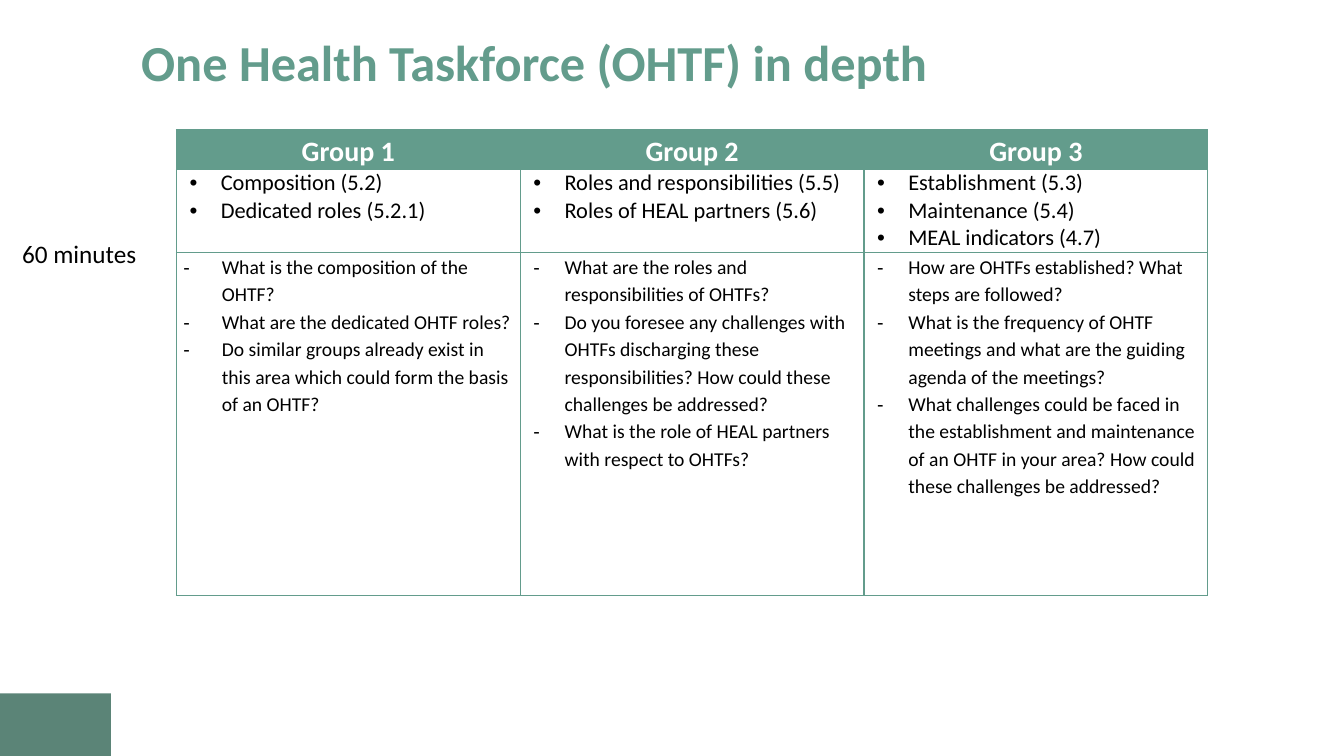
from dataclasses import dataclass

from lxml import etree
from pptx import Presentation
from pptx import util as u
from pptx.dml.color import RGBColor
from pptx.enum import shapes, text
from pptx.oxml import ns


@dataclass(frozen=True)
class Theme:
    font: str = "Calibri"
    green: RGBColor = RGBColor(0x63, 0x9C, 0x8C)
    corner: RGBColor = RGBColor(0x5B, 0x84, 0x77)
    black: RGBColor = RGBColor(0, 0, 0)
    white: RGBColor = RGBColor(255, 255, 255)
    title_size: int = 36
    header_size: int = 20
    duration_size: int = 18
    topic_size: int = 16
    question_size: int = 14
    border_width: int = 1


THEME = Theme()

GROUPS = [
    (
        "Group 1",
        ["Composition (5.2)", "Dedicated roles (5.2.1)"],
        [
            "What is the composition of the OHTF?",
            "What are the dedicated OHTF roles?",
            "Do similar groups already exist in this area which could form the basis of an OHTF?",
        ],
        (0.38, -0.38),
    ),
    (
        "Group 2",
        ["Roles and responsibilities (5.5)", "Roles of HEAL partners (5.6)"],
        [
            "What are the roles and responsibilities of OHTFs?",
            "Do you foresee any challenges with OHTFs discharging these responsibilities? "
            "How could these challenges be addressed?",
            "What is the role of HEAL partners with respect to OHTFs?",
        ],
        (0.37, -0.31),
    ),
    (
        "Group 3",
        ["Establishment (5.3)", "Maintenance (5.4)", "MEAL indicators (4.7)"],
        [
            "How are OHTFs established? What steps are followed?",
            "What is the frequency of OHTF meetings and what are the guiding agenda of the meetings?",
            "What challenges could be faced in the establishment and maintenance of an OHTF "
            "in your area? How could these challenges be addressed?",
        ],
        (0.37, -0.31),
    ),
]
TOPIC_INDENT = (0.37, -0.31)
ROW_HEIGHTS = (0.39, 0.82, 3.41)
COLUMN_WIDTH = 3.41


def add_run(paragraph, content, size, color, bold=False):
    run = paragraph.add_run()
    run.text = content
    run.font.name = THEME.font
    run.font.size = u.Pt(size)
    run.font.bold = bold
    run.font.color.rgb = color


def set_bullet(paragraph, character, indent):
    properties = paragraph._p.get_or_add_pPr()
    left, first = indent
    properties.set("marL", str(u.Inches(left)))
    properties.set("indent", str(u.Inches(first)))
    etree.SubElement(properties, ns.qn("a:buFont"), typeface="Arial")
    etree.SubElement(properties, ns.qn("a:buChar"), char=character)


def set_borders(cell):
    properties = cell._tc.get_or_add_tcPr()
    for side in ("lnL", "lnR", "lnT", "lnB"):
        line = etree.SubElement(properties, ns.qn(f"a:{side}"), w=str(u.Pt(THEME.border_width)))
        fill = etree.SubElement(line, ns.qn("a:solidFill"))
        etree.SubElement(fill, ns.qn("a:srgbClr"), val=str(THEME.green))


def format_cell(cell, fill=None):
    cell.margin_left = cell.margin_right = u.Inches(0.07)
    cell.margin_top = cell.margin_bottom = 0
    set_borders(cell)
    if fill is None:
        cell.fill.background()
    else:
        cell.fill.solid()
        cell.fill.fore_color.rgb = fill


def fill_header(cell, content):
    format_cell(cell, THEME.green)
    paragraph = cell.text_frame.paragraphs[0]
    paragraph.alignment = text.PP_ALIGN.CENTER
    paragraph.line_spacing = 1.15
    paragraph.space_after = u.Pt(12)
    add_run(paragraph, content, THEME.header_size, THEME.white, bold=True)


def fill_list(cell, items, character, indent, size, spacing):
    format_cell(cell)
    frame = cell.text_frame
    for index, item in enumerate(items):
        paragraph = frame.add_paragraph() if index else frame.paragraphs[0]
        set_bullet(paragraph, character, indent)
        paragraph.line_spacing = spacing
        add_run(paragraph, item, size, THEME.black)


def add_group_table(slide):
    table = slide.shapes.add_table(
        len(ROW_HEIGHTS), len(GROUPS), u.Inches(1.75), u.Inches(1.29),
        u.Inches(COLUMN_WIDTH * len(GROUPS)), u.Inches(sum(ROW_HEIGHTS)),
    ).table
    table.horz_banding = False
    for row, height in zip(table.rows, ROW_HEIGHTS):
        row.height = u.Inches(height)
    for column, (name, topics, questions, indent) in enumerate(GROUPS):
        table.columns[column].width = u.Inches(COLUMN_WIDTH)
        fill_header(table.cell(0, column), name)
        fill_list(table.cell(1, column), topics, "•", TOPIC_INDENT, THEME.topic_size, 1.0)
        fill_list(table.cell(2, column), questions, "-", indent, THEME.question_size, 1.15)


def set_title(slide, content):
    title = slide.shapes.title
    title.left, title.top = u.Inches(1.3), u.Inches(0.29)
    title.width, title.height = u.Inches(11.11), u.Inches(0.71)
    frame = title.text_frame
    frame.word_wrap = True
    frame.auto_size = text.MSO_AUTO_SIZE.NONE
    frame.vertical_anchor = text.MSO_ANCHOR.MIDDLE
    paragraph = frame.paragraphs[0]
    paragraph.alignment = text.PP_ALIGN.LEFT
    paragraph.line_spacing = 0.9
    add_run(paragraph, content, THEME.title_size, THEME.green, bold=True)


def add_corner_block(slide):
    block = slide.shapes.add_shape(
        shapes.MSO_SHAPE.RECTANGLE, 0, u.Inches(6.88), u.Inches(1.1), u.Inches(0.66)
    )
    block.shadow.inherit = False
    block.fill.solid()
    block.fill.fore_color.rgb = THEME.corner
    block.line.fill.background()


def add_duration(slide, content):
    box = slide.shapes.add_textbox(u.Inches(0.09), u.Inches(2.32), u.Inches(1.39), u.Inches(0.4))
    frame = box.text_frame
    frame.word_wrap = True
    frame.auto_size = text.MSO_AUTO_SIZE.SHAPE_TO_FIT_TEXT
    paragraph = frame.paragraphs[0]
    paragraph.alignment = text.PP_ALIGN.CENTER
    add_run(paragraph, content, THEME.duration_size, THEME.black)


def main():
    presentation = Presentation()
    presentation.slide_width = u.Inches(13.33)
    presentation.slide_height = u.Inches(7.5)
    slide = presentation.slides.add_slide(presentation.slide_layouts.get_by_name("Title Only"))
    add_corner_block(slide)
    set_title(slide, "One Health Taskforce (OHTF) in depth")
    add_group_table(slide)
    add_duration(slide, "60 minutes")
    presentation.save("out.pptx")


if __name__ == "__main__":
    main()
